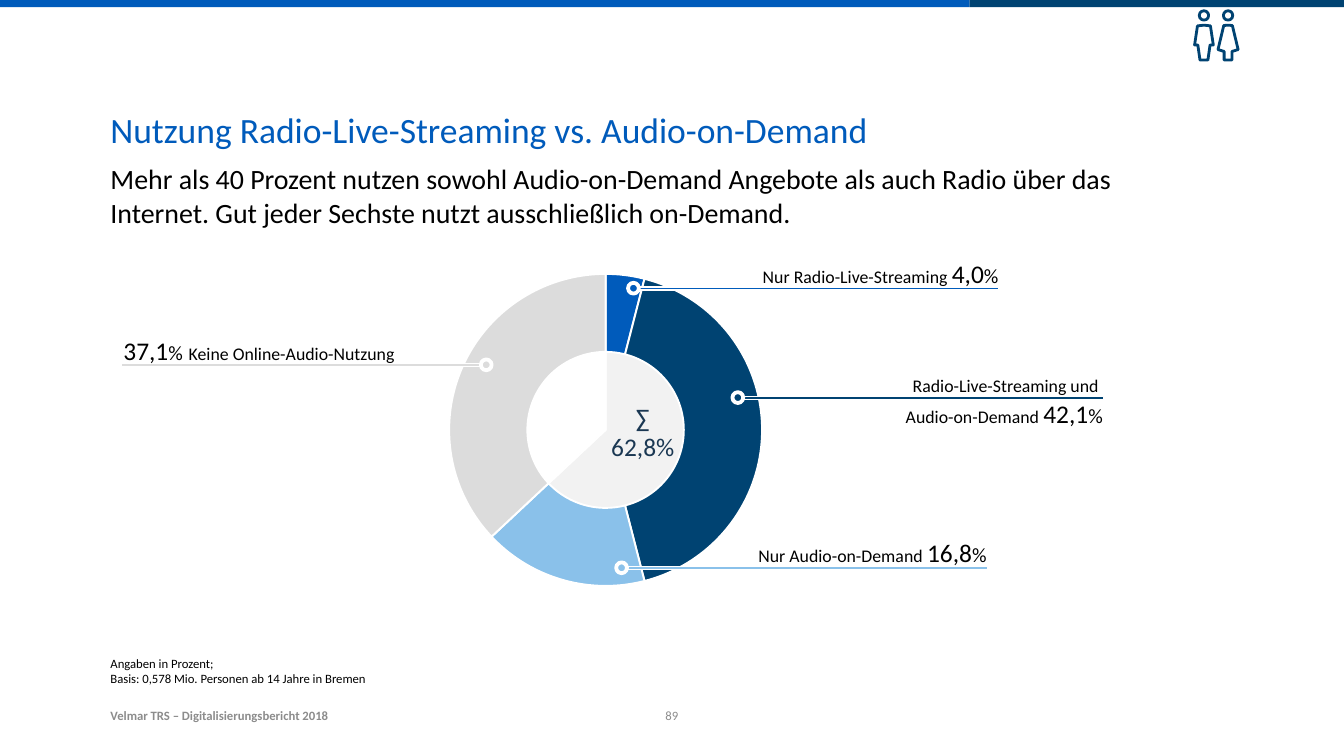
from dataclasses import dataclass

from lxml.etree import SubElement
from pptx import Presentation
from pptx.chart.data import CategoryChartData
from pptx.dml.color import RGBColor
from pptx.enum.chart import XL_CHART_TYPE as Chart
from pptx.enum.shapes import MSO_SHAPE as Shape
from pptx.enum.text import MSO_ANCHOR as Anchor, PP_ALIGN as Align
from pptx.oxml import parse_xml
from pptx.oxml.ns import nsdecls, qn
from pptx.util import Cm, Pt

BLUE, NAVY, SKY, SILVER = "005BBB", "004372", "8AC1EA", "DCDCDC"
BLACK, WHITE, GREY, INK, PALE = "000000", "FFFFFF", "8C8C8C", "1B3853", "F2F2F2"
FONT = "Calibri"
PLOT = {"x": 0.273, "y": 0.075, "w": 0.45, "h": 0.925}
BAR_W, BAR_H, DOT = 10.21, 0.08, 0.3


@dataclass
class Run:
    text: str
    size: float
    color: str = BLACK
    bold: bool = False


@dataclass
class Callout:
    x: float
    y: float
    color: str
    lines: list[list[Run]]
    on_left: bool = False


@dataclass
class Ring:
    kind: Chart
    values: tuple
    colors: tuple


@dataclass
class Person:
    x: float
    half: tuple


def share(value: str) -> list[Run]:
    """Return the runs of a percentage with a large number."""
    return [Run(value, 20), Run("%", 16)]


CALLOUTS = [
    Callout(17.55, 7.98, BLUE, [[Run("Nur Radio-Live-Streaming ", 14), *share("4,0")]]),
    Callout(20.45, 11.02, NAVY, [
        [Run(" ", 20), Run("Radio-Live-Streaming und ", 14)],
        [Run("Audio-on-Demand ", 14), *share("42,1")]]),
    Callout(17.22, 15.75, SKY, [[Run("Nur Audio-on-Demand ", 14), *share("16,8")]]),
    Callout(3.38, 10.11, SILVER, [
        [*share("37,1"), Run(" ", 20), Run("Keine Online-Audio-Nutzung", 14)]], True),
]
RINGS = [
    Ring(Chart.PIE, (63, None, None, 37), (PALE, NAVY, INK, None)),
    Ring(Chart.DOUGHNUT, (4, 42, 17, 37), (BLUE, NAVY, SKY, SILVER)),
]
PEOPLE = [
    Person(33.45, ((0, 0.7), (0.18, 0.72), (0.26, 1.25), (0.17, 1.25), (0.11, 1.67))),
    Person(34.12, ((0, 0.7), (0.12, 0.71), (0.28, 1.38), (0.11, 1.43), (0.11, 1.67))),
]


def rgb(color: str) -> RGBColor:
    """Turn a hex string into a colour."""
    return RGBColor.from_string(color)


def style(sp, fill: str | None, line: str | None = None, width: float = 1) -> None:
    """Set the fill and line of a shape and drop its shadow."""
    sp.shadow.inherit = False
    paint(sp, fill, line, width)


def paint(item, fill: str | None, line: str | None, width: float) -> None:
    """Set the fill and line of a shape or chart format."""
    if fill:
        item.fill.solid()
        item.fill.fore_color.rgb = rgb(fill)
    else:
        item.fill.background()
    if line:
        item.line.color.rgb = rgb(line)
        item.line.width = Pt(width)
    else:
        item.line.fill.background()


def add_shape(s, kind: Shape, x: float, y: float, w: float, h: float,
              fill: str | None, line: str | None = None, width: float = 1) -> None:
    """Add a styled preset shape."""
    style(s.shapes.add_shape(kind, Cm(x), Cm(y), Cm(w), Cm(h)), fill, line, width)


def add_text(s, x: float, y: float, w: float, h: float, lines: list[list[Run]],
             align: Align = Align.LEFT, anchor: Anchor = Anchor.TOP,
             spacing: float | None = None, wrap: bool = True) -> None:
    """Add a text box with one paragraph per line."""
    tf = s.shapes.add_textbox(Cm(x), Cm(y), Cm(w), Cm(h)).text_frame
    tf.word_wrap = wrap
    tf.vertical_anchor = anchor
    tf.margin_left = tf.margin_right = tf.margin_top = tf.margin_bottom = 0
    for i, line in enumerate(lines):
        p = tf.add_paragraph() if i else tf.paragraphs[0]
        p.alignment = align
        if spacing:
            p.line_spacing = Pt(spacing)
        for run in line:
            r = p.add_run()
            r.text = run.text
            r.font.name, r.font.size, r.font.bold = FONT, Pt(run.size), run.bold
            r.font.color.rgb = rgb(run.color)


def add_ring(s, ring: Ring) -> None:
    """Add a pie or doughnut chart with a transparent background."""
    data = CategoryChartData()
    data.categories = ["1", "2", "3", "4"]
    data.add_series("Series 1", ring.values)
    chart = s.shapes.add_chart(ring.kind, Cm(3.53), Cm(6.91), Cm(26.7), Cm(9.4), data).chart
    chart.has_legend = chart.has_title = False
    chart.font.name, chart.font.size = FONT, Pt(18)
    chart.font.color.rgb = rgb(BLACK)
    plot = chart.plots[0]
    plot.vary_by_categories = True
    for i, color in enumerate(ring.colors):
        paint(plot.series[0].points[i].format, color, WHITE, 1.5)
    root = chart.element.find(qn("c:chart"))
    root.addnext(parse_xml(
        f'<c:spPr {nsdecls("c", "a")}><a:noFill/><a:ln><a:noFill/></a:ln></c:spPr>'))
    area = root.find(qn("c:plotArea"))
    for old in area.findall(qn("c:layout")):
        area.remove(old)
    layout = parse_xml(f'<c:layout {nsdecls("c")}/>')
    area.insert(0, layout)
    manual = SubElement(layout, qn("c:manualLayout"))
    settings = {"layoutTarget": "inner", "xMode": "edge", "yMode": "edge", **PLOT}
    for tag, value in settings.items():
        SubElement(manual, qn(f"c:{tag}")).set("val", str(value))


def add_callout(s, c: Callout) -> None:
    """Add a leader bar, its dot and its label."""
    add_shape(s, Shape.RECTANGLE, c.x, c.y, BAR_W, BAR_H, c.color, WHITE)
    dot_x = c.x + (BAR_W - 0.23 if c.on_left else -0.1)
    add_shape(s, Shape.OVAL, dot_x, c.y - 0.12, DOT, DOT, c.color, WHITE, 3)
    text_x, w = (c.x + 0.05, 8.59) if c.on_left else (c.x + 2.24, 7.95)
    add_text(s, text_x, c.y - 0.81, w, 0.86 * len(c.lines), c.lines,
             Align.LEFT if c.on_left else Align.RIGHT)


def add_person(s, person: Person) -> None:
    """Add a head and a mirrored body outline."""
    add_shape(s, Shape.OVAL, person.x - 0.13, 0.3, 0.26, 0.26, None, NAVY, 2.2)
    mirrored = [(-x, y) for x, y in reversed(person.half[1:])]
    points = [(Cm(person.x + x), Cm(y)) for x, y in [*person.half, *mirrored]]
    body = s.shapes.build_freeform(*points[0])
    body.add_line_segments(points[1:], close=True)
    style(body.convert_to_shape(), None, NAVY, 2.2)


def main() -> None:
    """Build the slide and save it."""
    prs = Presentation()
    prs.slide_width, prs.slide_height = Cm(37.34), Cm(21.01)
    s = prs.slides.add_slide(prs.slide_layouts[6])
    add_shape(s, Shape.RECTANGLE, 0, 0, 26.94, 0.2, BLUE)
    add_shape(s, Shape.RECTANGLE, 26.94, 0, 10.4, 0.2, NAVY)
    for ring in RINGS:
        add_ring(s, ring)
    add_text(s, 3.07, 3, 31.19, 1.5,
             [[Run("Nutzung Radio-Live-Streaming vs. Audio-on-Demand", 28, BLUE)]])
    add_text(s, 3.07, 4.5, 29.08, 2, [[Run(
        "Mehr als 40 Prozent nutzen sowohl Audio-on-Demand Angebote als auch Radio über das "
        "Internet. Gut jeder Sechste nutzt ausschließlich on-Demand.", 22)]])
    add_text(s, 3.07, 18.29, 27.81, 0.79, [
        [Run("Angaben in Prozent;", 10)],
        [Run("Basis: 0,578 Mio. Personen ab 14 Jahre in Bremen", 10)]], anchor=Anchor.BOTTOM)
    add_text(s, 3.07, 19.51, 10.62, 0.58,
             [[Run("Velmar TRS – Digitalisierungsbericht 2018", 10, GREY, True)]],
             anchor=Anchor.BOTTOM)
    for callout in CALLOUTS:
        add_callout(s, callout)
    add_text(s, 16.97, 11.2, 1.78, 1.65, [[Run("∑", 20, INK)], [Run("62,8%", 20, INK)]],
             Align.CENTER, spacing=23, wrap=False)
    for person in PEOPLE:
        add_person(s, person)
    add_text(s, 18.26, 19.46, 0.81, 0.63, [[Run("89", 10, GREY)]], Align.CENTER, Anchor.BOTTOM)
    prs.save("out.pptx")


if __name__ == "__main__":
    main()
